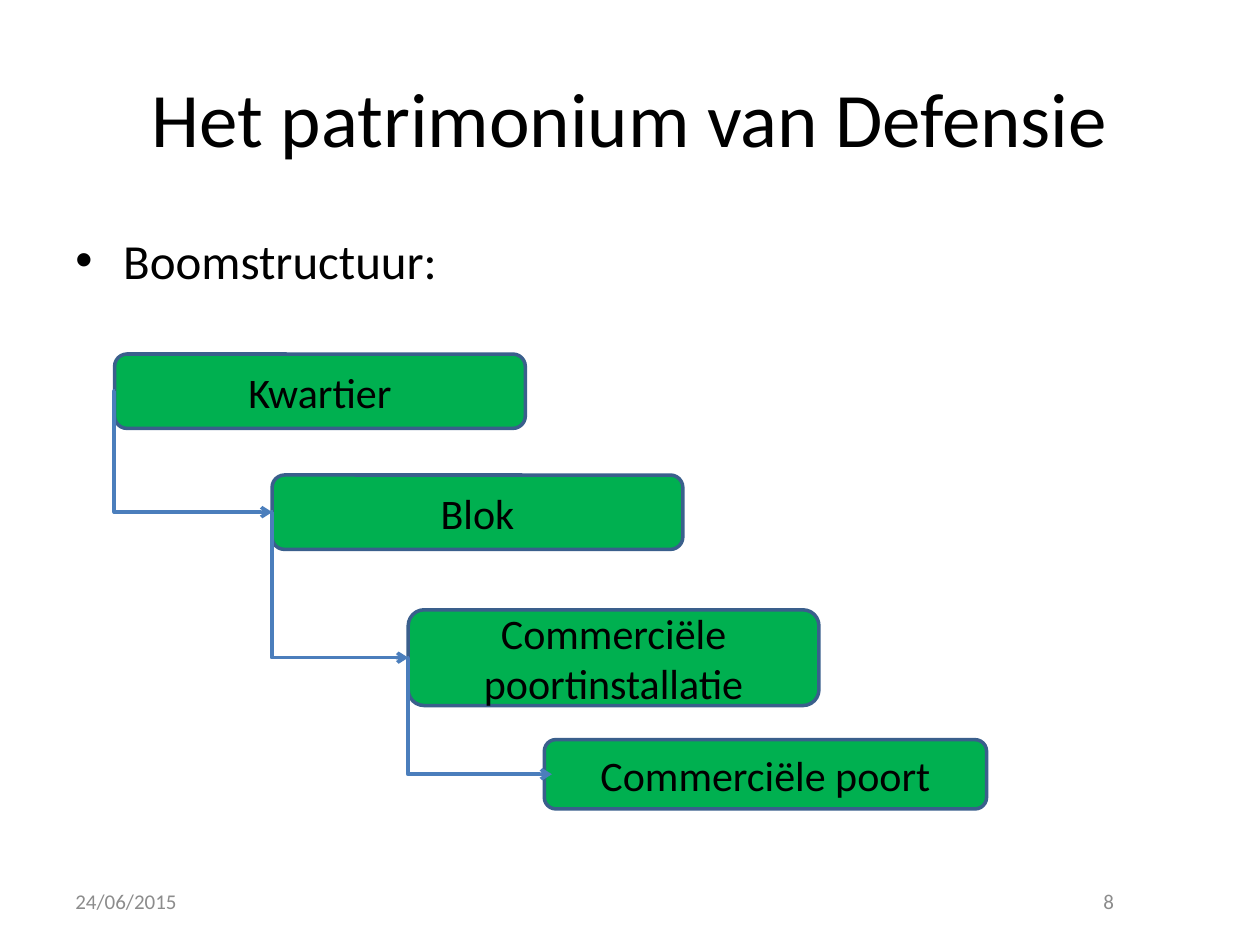
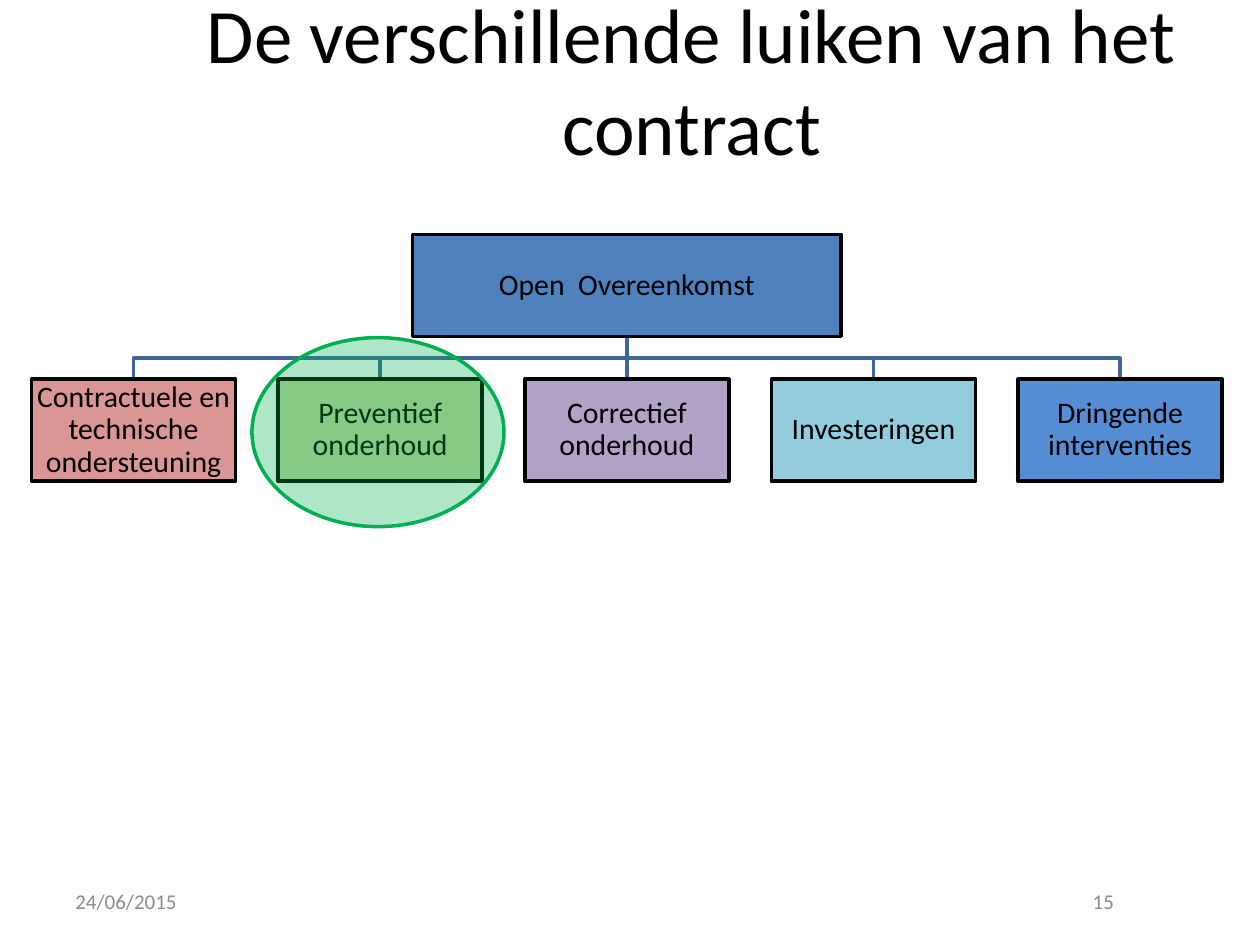
from pptx import Presentation
from pptx.dml.color import RGBColor
from pptx.enum.shapes import MSO_CONNECTOR, MSO_SHAPE
from pptx.enum.text import MSO_ANCHOR, MSO_AUTO_SIZE, PP_ALIGN
from pptx.oxml.ns import qn
from pptx.util import Inches, Pt
from lxml import etree

ROUND, RECT, OVAL = MSO_SHAPE.ROUNDED_RECTANGLE, MSO_SHAPE.RECTANGLE, MSO_SHAPE.OVAL
ELBOW, STRAIGHT = MSO_CONNECTOR.ELBOW, MSO_CONNECTOR.STRAIGHT
LEFT, CENTER, RIGHT = PP_ALIGN.LEFT, PP_ALIGN.CENTER, PP_ALIGN.RIGHT
TOP, MIDDLE = MSO_ANCHOR.TOP, MSO_ANCHOR.MIDDLE

# Content
DATE = "24/06/2015"
TREE = {
    "title": "Het patrimonium van Defensie",
    "at": (0.5, 0.3, 9, 1.25),
    "page": "8",
    "lead": "Boomstructuur:",
    "steps": [  # text, left, top, width, height
        ("Kwartier", 0.91, 2.81, 3.26, 0.59),
        ("Blok", 2.16, 3.77, 3.26, 0.59),
        ("Commerciële poortinstallatie", 3.24, 4.84, 3.26, 0.76),
        ("Commerciële poort", 4.32, 5.87, 3.51, 0.55),
    ],
}
PARTS = {
    "title": "De verschillende luiken van het contract",
    "at": (0.99, 0, 9, 1.25),
    "page": "15",
    "root": "Open  Overeenkomst",
    "leaves": [
        ("Contractuele en technische ondersteuning", "rose"),
        ("Preventief onderhoud", "lime"),
        ("Correctief onderhoud", "mauve"),
        ("Investeringen", "aqua"),
        ("Dringende interventies", "sky"),
    ],
}

# Shared style
FONT = "Calibri"
COLORS = {
    "black": "000000", "grey": "8C8C8C", "green": "00B050", "edge": "3A5F8C",
    "arrow": "4B7EBC", "link": "3F6797", "blue": "4F81BD", "rose": "D99694",
    "lime": "C3D69B", "mauve": "B3A2C7", "aqua": "93CDDD", "sky": "558ED5",
}
LINE = Pt(2)
STEP = {"size": 24, "inset": 0}
CELL = {"size": 17, "inset": 0.01, "space": 0.9}


def rgb(name):
    return RGBColor.from_string(COLORS[name])


def write(shape, text, size, color="black", align=CENTER, anchor=MIDDLE,
          inset=None, space=None):
    frame = shape.text_frame
    frame.word_wrap = True
    frame.auto_size = MSO_AUTO_SIZE.NONE
    frame.vertical_anchor = anchor
    if inset is not None:
        for side in ("left", "top", "right", "bottom"):
            setattr(frame, "margin_" + side, Inches(inset))
    para = frame.paragraphs[0]
    para.alignment = align
    if space:
        para.line_spacing = space
    run = para.add_run()
    run.text = text
    for key, value in {"name": FONT, "size": Pt(size)}.items():
        setattr(run.font, key, value)
    run.font.color.rgb = rgb(color)
    return para


def label(slide, at, text, size, **style):
    return write(slide.shapes.add_textbox(*map(Inches, at)), text, size, **style)


def stroke(shape, color):
    shape.line.color.rgb = rgb(color)
    shape.line.width = LINE


def block(slide, kind, at, fill, edge):
    shape = slide.shapes.add_shape(kind, *map(Inches, at))
    shape.shadow.inherit = False
    shape.fill.solid()
    shape.fill.fore_color.rgb = rgb(fill)
    stroke(shape, edge)
    return shape


def join(slide, kind, start, end, color):
    wire = slide.shapes.add_connector(kind, *map(Inches, start + end))
    stroke(wire, color)
    etree.SubElement(wire.element.spPr, qn("a:effectLst"))
    return wire


def start_slide(deck, data):
    slide = deck.slides.add_slide(deck.slide_layouts[5])
    title = slide.shapes.title
    title.left, title.top, title.width, title.height = map(Inches, data["at"])
    write(title, data["title"], 44)
    label(slide, (0.5, 6.95, 2.33, 0.4), DATE, 12, color="grey", align=LEFT)
    label(slide, (7.17, 6.95, 1.77, 0.4), data["page"], 12, color="grey", align=RIGHT)
    return slide


def draw_tree(deck):
    slide = start_slide(deck, TREE)

    # Bullet line
    para = label(slide, (0.5, 1.78, 8.93, 0.72), TREE["lead"], 28,
                 align=LEFT, anchor=TOP)
    props = para._p.get_or_add_pPr()
    props.set("marL", str(Inches(0.38)))
    props.set("indent", str(Inches(-0.38)))
    etree.SubElement(props, qn("a:buFont"), typeface="Arial")
    etree.SubElement(props, qn("a:buChar"), char="•")

    # Steps
    for text, *at in TREE["steps"]:
        write(block(slide, ROUND, at, "green", "edge"), text, **STEP)

    # Arrows run down the left edge, then across to the next step
    ports = [(x, y + h / 2) for _, x, y, _, h in TREE["steps"]]
    x, y = ports[-1]
    ends = ports[1:-1] + [(x + 0.06, y)]
    for start, end in zip(ports, ends):
        wire = join(slide, ELBOW, start, end, "arrow")
        props = wire.element.spPr
        bends = props.find(qn("a:prstGeom")).get_or_add_avLst()
        etree.SubElement(bends, qn("a:gd"), name="adj1", fmla="val -300")
        etree.SubElement(props.find(qn("a:ln")), qn("a:tailEnd"), type="arrow")


def draw_parts(deck):
    slide = start_slide(deck, PARTS)
    leaves = PARTS["leaves"]
    left, top, wide, high = 0.25, 3.01, 1.62, 0.81
    pitch = (8.08 - left) / (len(leaves) - 1)
    mids = [left + wide / 2 + i * pitch for i in range(len(leaves))]
    hub = mids[len(mids) // 2]
    root = (hub - 1.7, 1.86, 3.4, high)
    base = root[1] + high
    rail = (base + top) / 2

    # Links from the root to each leaf
    for mid in reversed(mids):
        if mid == hub:
            join(slide, STRAIGHT, (hub, base), (hub, top), "link")
            continue
        path = [(Inches(x), Inches(y))
                for x, y in ((hub, base), (hub, rail), (mid, rail), (mid, top))]
        draft = slide.shapes.build_freeform(*path[0])
        draft.add_line_segments(path[1:], close=False)
        link = draft.convert_to_shape()
        link.shadow.inherit = False
        link.fill.background()
        stroke(link, "link")

    # Root and leaves
    write(block(slide, RECT, root, "blue", "black"), PARTS["root"], **CELL)
    for mid, (text, fill) in zip(mids, leaves):
        at = (mid - wide / 2, top, wide, high)
        write(block(slide, RECT, at, fill, "black"), text, **CELL)

    # See-through highlight
    ring = block(slide, OVAL, (2, 2.68, 2, 1.5), "green", "green")
    tint = ring.element.spPr.find(qn("a:solidFill")).find(qn("a:srgbClr"))
    etree.SubElement(tint, qn("a:alpha"), val="31000")


def main():
    deck = Presentation()
    deck.slide_width, deck.slide_height = Inches(10), Inches(7.5)
    draw_tree(deck)
    draw_parts(deck)
    deck.save("out.pptx")


if __name__ == "__main__":
    main()
